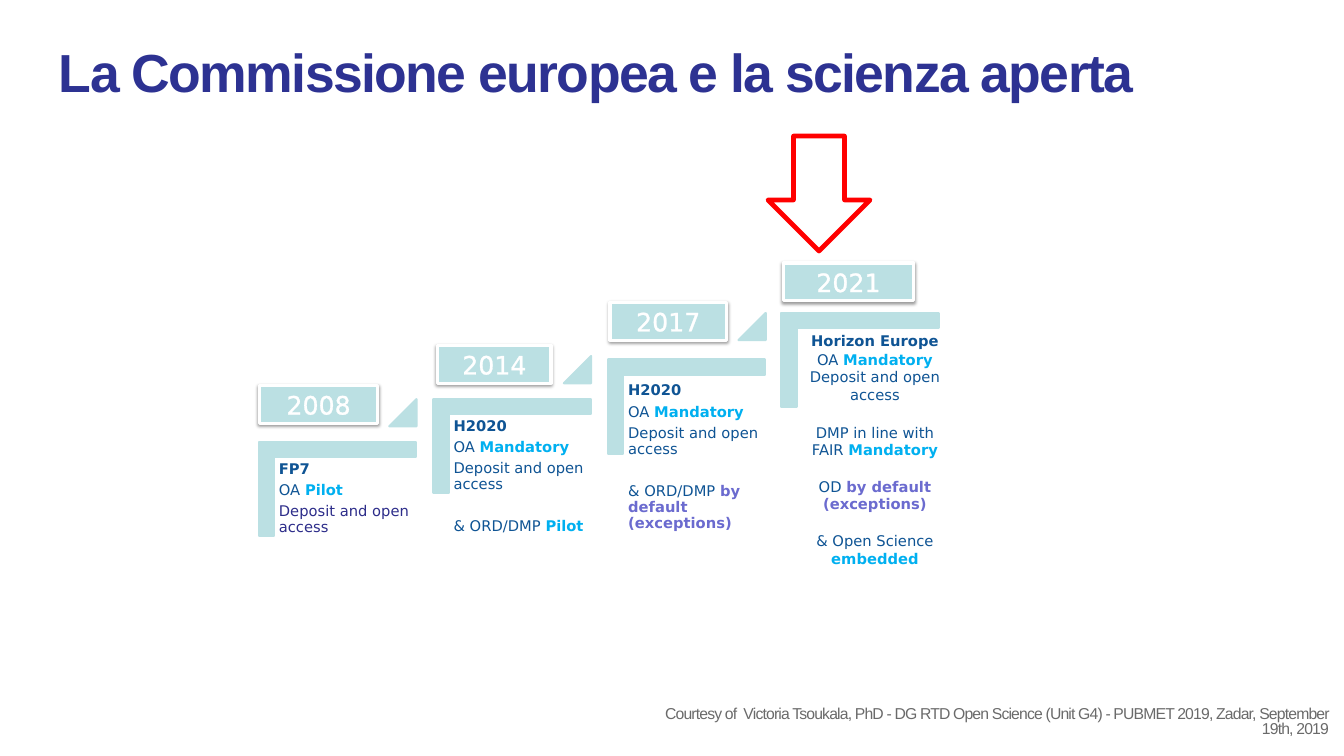
from dataclasses import dataclass

from lxml.etree import SubElement
from pptx import Presentation
from pptx.dml.color import RGBColor
from pptx.enum.shapes import MSO_SHAPE as Shape
from pptx.enum.text import MSO_ANCHOR as Anchor, MSO_AUTO_SIZE as AutoSize, PP_ALIGN as Align
from pptx.oxml.ns import qn
from pptx.slide import Slide
from pptx.util import Emu, Pt

EMU_PER_PX = 9144
WHITE = RGBColor(0xFF, 0xFF, 0xFF)
INDIGO = RGBColor(0x2D, 0x32, 0x92)
VIOLET = RGBColor(0x2D, 0x2D, 0x8A)
GREY = RGBColor(0x6A, 0x6A, 0x6A)
TEAL = RGBColor(0xBB, 0xE0, 0xE3)
NAVY = RGBColor(0x0F, 0x54, 0x94)
CYAN = RGBColor(0x00, 0xB0, 0xF0)
LILAC = RGBColor(0x6B, 0x6B, 0xCF)
RED = RGBColor(0xFF, 0x00, 0x00)


def px(*lengths):
    return [Emu(length * EMU_PER_PX) for length in lengths]


def add_span(para, text, color=NAVY, bold=False, size=14, font="DejaVu Sans", tracking=0, outline=None):
    span = para.add_run()
    span.text = text
    span.font.name = font
    span.font.size = Pt(size)
    span.font.bold = bold
    span.font.color.rgb = color
    props = span._r.get_or_add_rPr()
    if tracking:
        props.set("spc", str(tracking))
    if outline:
        line = SubElement(props, qn("a:ln"), w=str(Pt(1.45)))
        fill = SubElement(line, qn("a:solidFill"))
        SubElement(fill, qn("a:srgbClr"), val=str(outline))
        props.insert(0, line)


def fill_para(para, spans, align=Align.LEFT, spacing=1.0, before=0, after=0, **style):
    para.alignment = align
    para.line_spacing = spacing
    para.space_before = Pt(before)
    para.space_after = Pt(after)
    for text, *look in spans:
        add_span(para, text, *look, **style)


@dataclass
class Page:
    slide: Slide
    accent: RGBColor = TEAL

    def frame(self, box, inset=0, anchor=Anchor.TOP):
        frame = box.text_frame
        frame.word_wrap = True
        frame.auto_size = AutoSize.NONE
        frame.vertical_anchor = anchor
        sides = px(inset)[0]
        frame.margin_left = frame.margin_right = frame.margin_top = frame.margin_bottom = sides
        return frame

    def title(self, text, left, top, width, height):
        box = self.slide.shapes.title
        box.left, box.top, box.width, box.height = px(left, top, width, height)
        para = self.frame(box, anchor=Anchor.MIDDLE).paragraphs[0]
        fill_para(para, [(text, INDIGO, True)], spacing=0.9, size=51, font="Arial", tracking=-150)

    def credit(self, text, *place):
        box = self.slide.shapes.add_textbox(*px(*place))
        para = self.frame(box, anchor=Anchor.MIDDLE).paragraphs[0]
        fill_para(para, [(text, GREY)], Align.RIGHT, 0.8, size=15, font="Arial", tracking=-80)

    def text(self, paras, *place, inset=6, **layout):
        frame = self.frame(self.slide.shapes.add_textbox(*px(*place)), inset)
        for index, (spans, spaces) in enumerate(paras):
            para = frame.add_paragraph() if index else frame.paragraphs[0]
            fill_para(para, spans, **{**layout, **spaces})

    def shape(self, kind, *place, fill=None, line=None, weight=2, adjust=(), turn=0):
        shape = self.slide.shapes.add_shape(kind, *px(*place))
        shape.shadow.inherit = False
        shape.rotation = turn
        for index, value in enumerate(adjust):
            shape.adjustments[index] = value
        if fill:
            shape.fill.solid()
            shape.fill.fore_color.rgb = fill
        else:
            shape.fill.background()
        shape.line.color.rgb = line or self.accent
        shape.line.width = Pt(weight)
        return shape

    def corner(self, left, top):
        self.shape(Shape.CORNER, left, top, 125, 208, fill=self.accent, adjust=(0.161, 0.161), turn=90)

    def wedge(self, left, top):
        self.shape(Shape.ISOSCELES_TRIANGLE, left, top, 36, 36, fill=self.accent, adjust=(1,))

    def badge(self, year, left, top, width):
        box = self.shape(Shape.RECTANGLE, left, top, width, 50, fill=self.accent, line=WHITE, weight=3)
        effects = box._element.spPr.find(qn("a:effectLst"))
        shadow = SubElement(effects, qn("a:outerShdw"), blurRad=str(Pt(3.1)), dist=str(Pt(1.6)),
                            dir="5400000", rotWithShape="0")
        color = SubElement(shadow, qn("a:srgbClr"), val="000000")
        SubElement(color, qn("a:alpha"), val="38000")
        para = self.frame(box, 5, Anchor.MIDDLE).paragraphs[0]
        fill_para(para, [(year, WHITE)], Align.CENTER, size=24, outline=WHITE)


def programme(name, status, color=NAVY):
    return [
        ([(name, NAVY, True)], {}),
        ([("OA ",), (status, CYAN, True)], {}),
        ([("Deposit and open access", color)], {}),
    ]


FP7 = programme("FP7", "Pilot", VIOLET)
H2020 = programme("H2020", "Mandatory")
H2020_PILOT = H2020 + [([("& ORD/DMP ",), ("Pilot", CYAN, True)], {"before": 20})]
H2020_DEFAULT = H2020 + [
    ([("& ORD/DMP ",), ("by default", LILAC, True)], {"before": 20, "after": 0}),
    ([("(exceptions)", LILAC, True)], {"after": 0}),
]
HORIZON = [
    ([("Horizon Europe", NAVY, True)], {}),
    ([("OA ",), ("Mandatory", CYAN, True)], {"before": 1}),
    ([("Deposit and open access",)], {}),
    ([("DMP in line with FAIR ",), ("Mandatory", CYAN, True)], {"before": 19}),
    ([("OD ",), ("by default (exceptions)", LILAC, True)], {"before": 18}),
    ([("& Open Science ",), ("embedded", CYAN, True)], {"before": 18}),
]
STEPS = [
    (384, 543, FP7, 605, 528),
    (615, 486, H2020_PILOT, 548, 471),
    (846, 434, H2020_DEFAULT, 501, 414),
]
BADGES = [
    ("2008", 343, 510, 157),
    ("2014", 579, 457, 150),
    ("2017", 807, 400, 154),
    ("2021", 1036, 348, 173),
]


def main():
    deck = Presentation()
    deck.slide_width, deck.slide_height = px(1778, 1000)
    page = Page(deck.slides.add_slide(deck.slide_layouts[5]))
    page.title("La Commissione europea e la scienza aperta", 78, 37, 1480, 125)
    page.credit(
        "Courtesy of  Victoria Tsoukala, PhD - DG RTD Open Science (Unit G4) - "
        "PUBMET 2019, Zadar, September 19th, 2019", 851, 935, 907, 41)
    for left, top, paras, text_top, wedge_top in STEPS:
        page.corner(left, top)
        page.text(paras, left - 21, text_top, 188, 165, spacing=0.9, after=5)
        page.wedge(left + 131, wedge_top)
    page.corner(1075, 372)
    page.text(HORIZON, 1059, 434, 197, 330, inset=5, align=Align.CENTER)
    for badge in BADGES:
        page.badge(*badge)
    page.shape(Shape.DOWN_ARROW, 1016, 180, 135, 152, line=RED, weight=4.5)
    deck.save("out.pptx")


if __name__ == "__main__":
    main()
